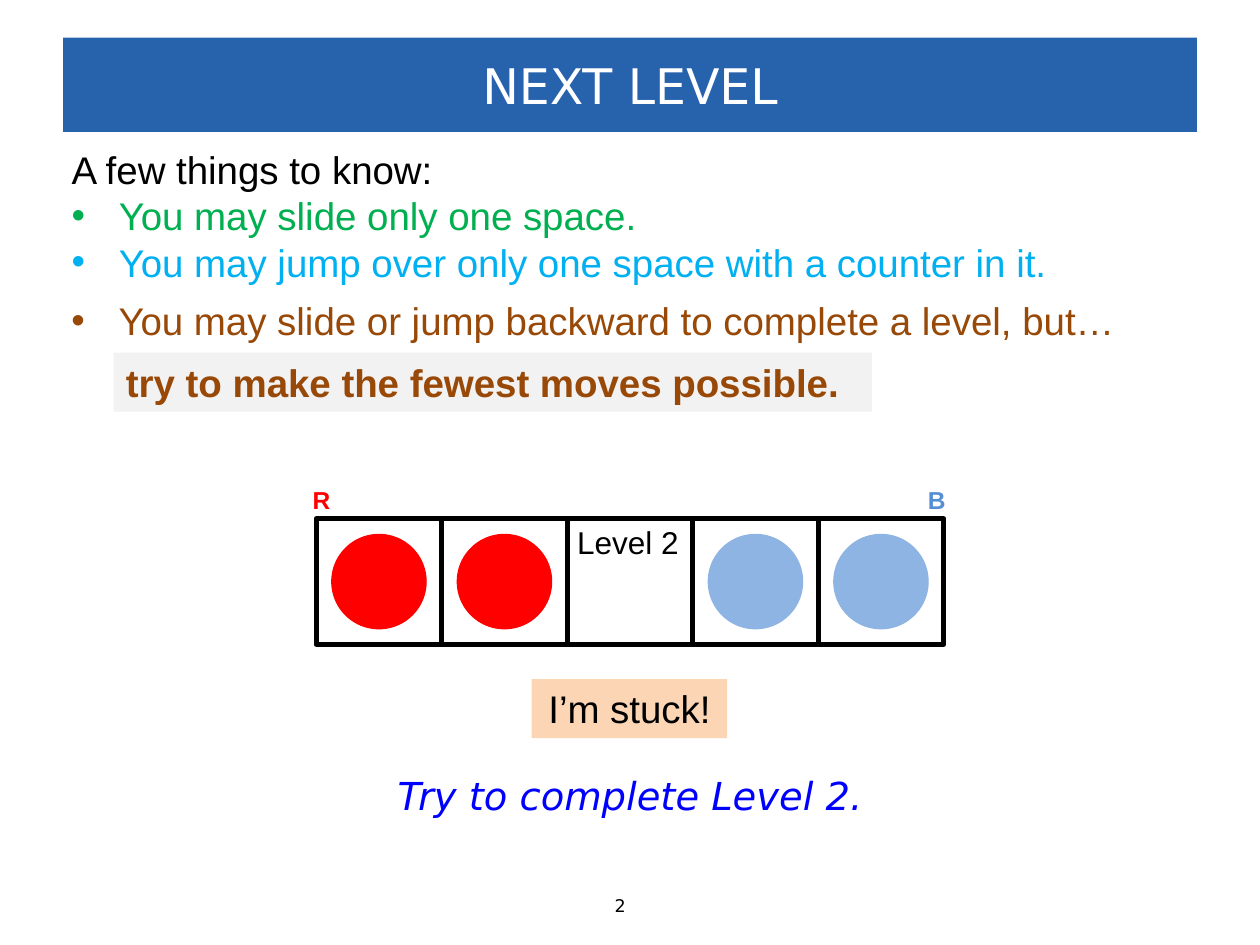
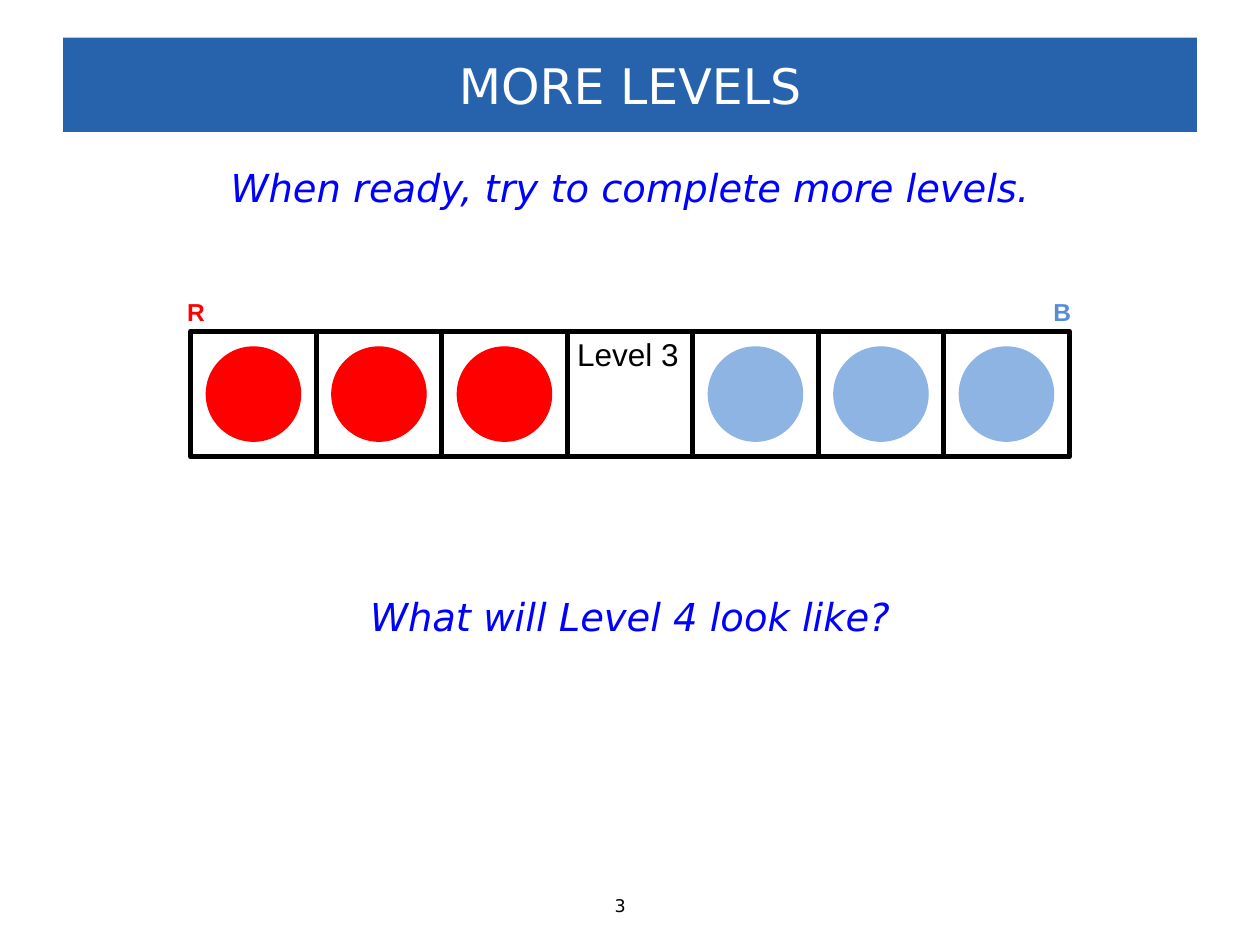
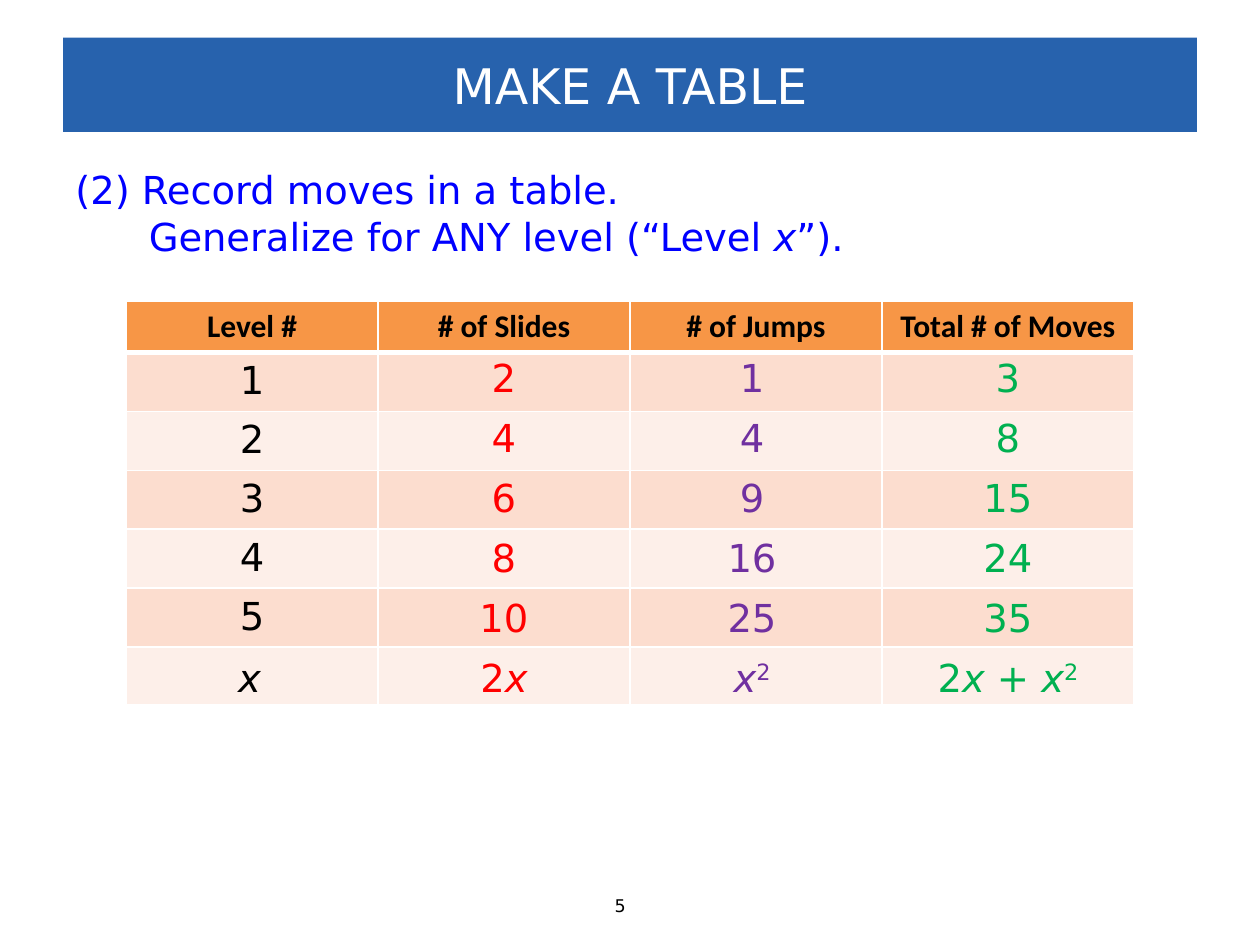
from dataclasses import dataclass

from lxml.etree import SubElement
from pptx import Presentation
from pptx.dml.color import RGBColor
from pptx.enum.shapes import MSO_SHAPE as Shape
from pptx.enum.text import MSO_ANCHOR as Anchor
from pptx.enum.text import MSO_AUTO_SIZE as AutoSize
from pptx.enum.text import PP_ALIGN as Align
from pptx.oxml.ns import qn
from pptx.util import Cm, Pt


@dataclass(frozen=True)
class Theme:
    """Colours, fonts and type sizes shared by the slides."""

    band: str = "2762AD"
    white: str = "FFFFFF"
    black: str = "000000"
    prompt: str = "0000FF"
    red: str = "FF0000"
    blue: str = "8EB4E3"
    blue_label: str = "558ED5"
    green: str = "00B050"
    sky: str = "00B0F0"
    brown: str = "984807"
    purple: str = "7030A0"
    grey: str = "F2F2F2"
    peach: str = "FCD5B5"
    header: str = "F79646"
    rows: tuple = ("FCDDCF", "FDEFE9")
    display: str = "DejaVu Sans"
    plain: str = "Arial"
    table: str = "Calibri"
    title_size: int = 28
    body_size: int = 22
    label_size: int = 18
    side_size: int = 14
    page_size: int = 10


THEME = Theme()
SLIDE_WIDTH, SLIDE_HEIGHT = 25.4, 19.05
CELL, COUNTER = 2.53, 1.9
LINE_HEIGHT = 1.19


def rgb(colour):
    """Turn a hex string into a colour."""
    return RGBColor.from_string(colour)


def style(font, colour, size=THEME.body_size, name=THEME.plain, bold=False, italic=False):
    """Set every property of a font."""
    font.name, font.size = name, Pt(size)
    font.bold, font.italic = bold, italic
    font.color.rgb = rgb(colour)


def place(target, left, top, width, height):
    """Move and size a shape, in centimetres."""
    target.left, target.top = Cm(left), Cm(top)
    target.width, target.height = Cm(width), Cm(height)


def add_text(slide, text, box, colour, align=Align.LEFT, fill=None, **font):
    """Add a one-paragraph text box and return its paragraph."""
    holder = slide.shapes.add_textbox(*map(Cm, box))
    if fill:
        holder.fill.solid()
        holder.fill.fore_color.rgb = rgb(fill)
    frame = holder.text_frame
    frame.word_wrap = True
    frame.auto_size = AutoSize.SHAPE_TO_FIT_TEXT
    frame.text = text
    paragraph = frame.paragraphs[0]
    paragraph.alignment = align
    for run in paragraph.runs:
        style(run.font, colour, **font)
    return paragraph


def add_pieces(paragraph, pieces, colour):
    """Append (text, kind) runs; the kind is plain, italic or super."""
    for text, kind in pieces:
        run = paragraph.add_run()
        run.text = text
        style(run.font, colour, name=THEME.display, italic=kind == "italic")
        if kind == "super":
            run.font._element.set("baseline", "30000")


def set_indent(paragraph, left, first=0.0, bullet=None):
    """Set the indents of a paragraph and its bullet sign."""
    properties = paragraph._p.get_or_add_pPr()
    properties.set("marL", str(Cm(left)))
    properties.set("indent", str(Cm(first)))
    if bullet:
        SubElement(properties, qn("a:buFont"), typeface=THEME.plain)
        SubElement(properties, qn("a:buChar"), char=bullet)
    else:
        SubElement(properties, qn("a:buNone"))


def add_bullet(paragraph):
    """Give a paragraph the hanging bullet of the rules."""
    set_indent(paragraph, 0.95, -0.95, "•")


def add_slide(deck, layout, title, page):
    """Add a slide with the title band and the page number."""
    slide = deck.slides.add_slide(deck.slide_layouts.get_by_name(layout))
    band = slide.shapes.title
    place(band, 1.27, 0.76, 22.86, 1.9)
    band.fill.solid()
    band.fill.fore_color.rgb = rgb(THEME.band)
    frame = band.text_frame
    frame.text = title
    frame.vertical_anchor = Anchor.MIDDLE
    frame.paragraphs[0].alignment = Align.CENTER
    style(frame.paragraphs[0].runs[0].font, THEME.white, THEME.title_size, THEME.display)
    add_text(slide, page, (12.14, 17.91, 1.12, 0.69), THEME.black,
             size=THEME.page_size, name=THEME.display)
    return slide


def add_prompt(slide, text, top, width):
    """Add a centred blue instruction."""
    add_text(slide, text, ((SLIDE_WIDTH - width) / 2, top, width, LINE_HEIGHT),
             THEME.prompt, Align.CENTER, name=THEME.display, italic=True)


def add_cell(slide, left, top):
    """Add one open square of the board."""
    square = slide.shapes.add_shape(Shape.RECTANGLE, *map(Cm, (left, top, CELL, CELL)))
    square.shadow.inherit = False
    square.fill.background()
    square.line.color.rgb = rgb(THEME.black)
    square.line.width = Pt(3)


def add_counter(slide, left, top, colour):
    """Add a counter in the middle of the square at left, top."""
    gap = (CELL - COUNTER) / 2
    counter = slide.shapes.add_shape(
        Shape.OVAL, *map(Cm, (left + gap, top + gap, COUNTER, COUNTER)))
    counter.shadow.inherit = False
    counter.fill.solid()
    counter.fill.fore_color.rgb = rgb(colour)
    counter.line.color.rgb = rgb(colour)
    counter.line.width = Pt(0.75)


def add_board(slide, level, top):
    """Add a centred board with as many counters a side as the level."""
    count = 2 * level + 1
    start = (SLIDE_WIDTH - count * CELL) / 2
    for index in range(count):
        left = start + index * CELL
        add_cell(slide, left, top)
        if index == level:
            add_text(slide, f"Level {level}", (left - 0.05, top - 0.05, 2.7, 1.02),
                     THEME.black, size=THEME.label_size)
        else:
            add_counter(slide, left, top, THEME.red if index < level else THEME.blue)
    sides = (("R", start - 0.32, THEME.red),
             ("B", start + count * CELL - 0.57, THEME.blue_label))
    for letter, left, colour in sides:
        add_text(slide, letter, (left, top - 0.81, 0.84, 0.86), colour,
                 size=THEME.side_size, bold=True)


def add_rules(slide):
    """Fill the body with the rules of the game."""
    body = slide.placeholders[1]
    place(body, 1.19, 2.82, 20.45, 3.07)
    frame = body.text_frame
    frame.auto_size = AutoSize.NONE
    rules = (("A few things to know:", THEME.black),
             ("You may slide only one space.", THEME.green),
             ("You may jump over only one space with a counter in it.", THEME.sky))
    frame.text = "\n".join(text for text, _ in rules)
    for index, (paragraph, (_, colour)) in enumerate(zip(frame.paragraphs, rules)):
        paragraph.space_before = Pt(0)
        if index:
            add_bullet(paragraph)
        else:
            set_indent(paragraph, 0)
        style(paragraph.font, colour)
        style(paragraph.runs[0].font, colour)
    last = add_text(slide, "You may slide or jump backward to complete a level, but…",
                    (1.19, 5.87, 22.12, LINE_HEIGHT), THEME.brown)
    add_bullet(last)
    add_text(slide, "try to make the fewest moves possible.",
             (2.29, 7.11, 15.29, LINE_HEIGHT), THEME.brown, fill=THEME.grey, bold=True)


def set_border(cell, side, width):
    """Draw one white cell edge."""
    edge = SubElement(cell._tc.get_or_add_tcPr(), qn(f"a:ln{side}"), w=str(Pt(width)))
    fill = SubElement(edge, qn("a:solidFill"))
    SubElement(fill, qn("a:srgbClr"), val=THEME.white)


def fill_cell(cell, row, text):
    """Write and colour one table cell."""
    for side in "LRTB":
        set_border(cell, side, 3 if (row, side) in ((0, "B"), (1, "T")) else 1)
    cell.fill.solid()
    cell.fill.fore_color.rgb = rgb(THEME.rows[(row - 1) % 2] if row else THEME.header)
    cell.vertical_anchor = Anchor.TOP if row else Anchor.MIDDLE
    if text:
        cell.text = text
        paragraph = cell.text_frame.paragraphs[0]
        paragraph.alignment = Align.CENTER
        size, name = ((THEME.body_size, THEME.display) if row
                      else (THEME.label_size, THEME.table))
        style(paragraph.runs[0].font, THEME.black, size, name, bold=not row)


def add_moves_table(slide, levels):
    """Add the table with its headings and level numbers."""
    headings = ("Level #", "# of Slides", "# of Jumps", "Total # of Moves")
    rows = [headings, *((str(level), "", "", "") for level in levels), ("",) * 4]
    frame = slide.shapes.add_table(len(rows), len(headings),
                                   *map(Cm, (2.54, 6.07, 20.32, 8.0)))
    table = frame.table
    for index, row in enumerate(rows):
        table.rows[index].height = Cm(1.16 if index else 1.04)
        for column, text in enumerate(row):
            fill_cell(table.cell(index, column), index, text)


def add_answers(slide, levels):
    """Lay the counted moves and the general formulas over the table."""
    top, pitch, width = 7.01, 1.21, 1.93
    slides, jumps = [2 * n for n in levels], [n * n for n in levels]
    totals = [s + j for s, j in zip(slides, jumps)]
    two, x, squared = ("2", "plain"), ("x", "italic"), ("2", "super")
    columns = ((10.16, THEME.red, slides, (two, x), width),
               (15.16, THEME.purple, jumps, (x, squared), width),
               (20.32, THEME.green, totals, (two, ("x + x", "italic"), squared), 3.43),
               (5.03, THEME.black, (), (x,), 1.37))
    for centre, colour, counts, formula, formula_width in columns:
        for row, count in enumerate(counts):
            add_text(slide, str(count),
                     (centre - width / 2, top + row * pitch, width, LINE_HEIGHT),
                     colour, Align.CENTER, name=THEME.display)
        general = add_text(slide, "", (centre - formula_width / 2, top + len(levels) * pitch,
                                       formula_width, LINE_HEIGHT), colour, Align.CENTER)
        add_pieces(general, formula, colour)


def add_task(slide):
    """Add the two-line task above the table."""
    task = add_text(slide, "(2) Record moves in a table.", (1.27, 3.23, 16.21, 2.13),
                    THEME.prompt, name=THEME.display)
    general = task._parent.add_paragraph()
    set_indent(general, 1.48)
    add_pieces(general, (("Generalize for ANY level (“Level ", "plain"),
                         ("x", "italic"), ("”).", "plain")), THEME.prompt)


def main():
    """Build the deck."""
    deck = Presentation()
    deck.slide_width, deck.slide_height = Cm(SLIDE_WIDTH), Cm(SLIDE_HEIGHT)

    next_level = add_slide(deck, "Title and Content", "NEXT LEVEL", "2")
    add_rules(next_level)
    add_board(next_level, 2, 10.46)
    add_text(next_level, "I’m stuck!", (10.72, 13.69, 3.94, LINE_HEIGHT),
             THEME.black, Align.CENTER, THEME.peach)
    add_prompt(next_level, "Try to complete Level 2.", 15.44, 10.21)

    more_levels = add_slide(deck, "Title Only", "MORE LEVELS", "3")
    add_prompt(more_levels, "When ready, try to complete more levels.", 3.18, 17.4)
    add_board(more_levels, 3, 6.68)
    add_prompt(more_levels, "What will Level 4 look like?", 11.84, 11.84)

    make_table = add_slide(deck, "Title Only", "MAKE A TABLE", "5")
    levels = range(1, 6)
    add_moves_table(make_table, levels)
    add_task(make_table)
    add_answers(make_table, levels)

    deck.save("out.pptx")


if __name__ == "__main__":
    main()
